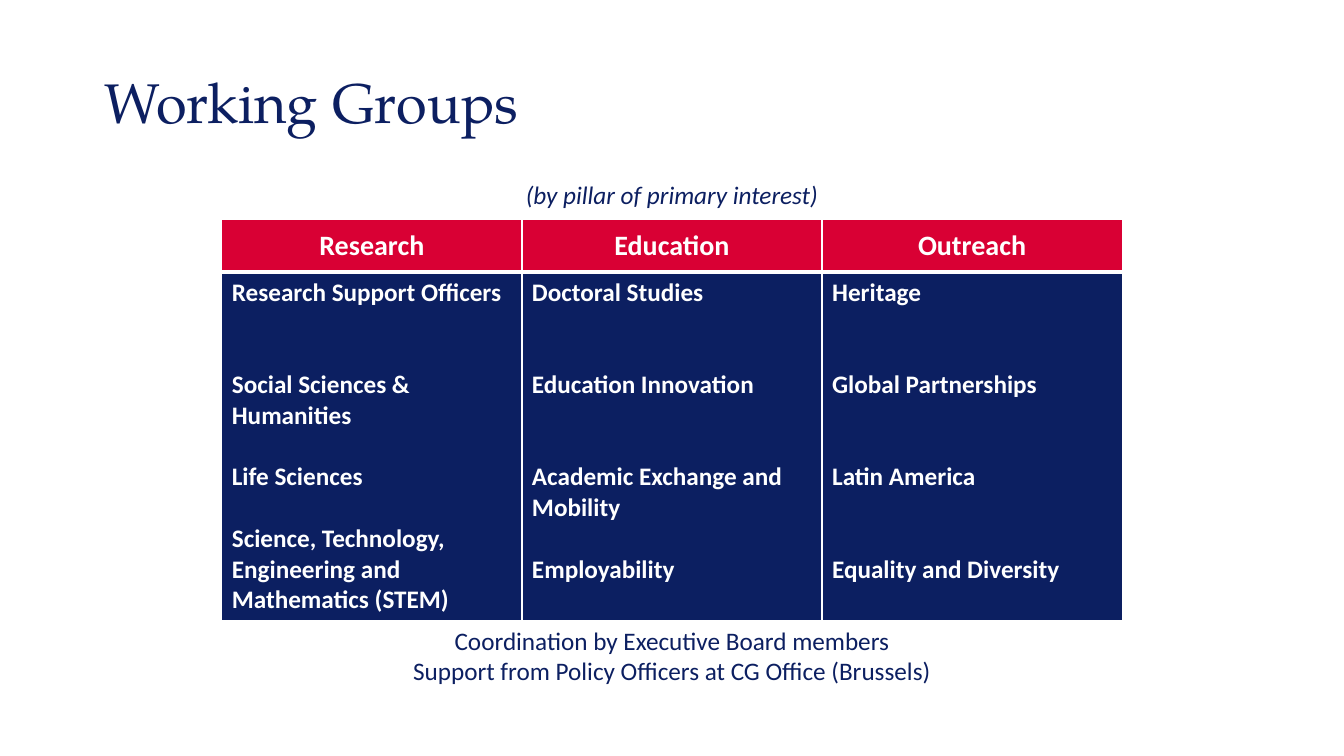
"""Build the Working Groups slide: a title, a three-pillar table and two captions."""
from dataclasses import dataclass

from lxml.etree import SubElement
from pptx import Presentation
from pptx.dml.color import RGBColor
from pptx.enum.text import MSO_ANCHOR as Anchor, PP_ALIGN as Align
from pptx.oxml.ns import qn
from pptx.util import Inches, Pt


@dataclass(frozen=True)
class Theme:
    navy: RGBColor = RGBColor(0x0C, 0x1F, 0x61)
    red: RGBColor = RGBColor(0xD9, 0x00, 0x34)
    white: RGBColor = RGBColor(0xFF, 0xFF, 0xFF)
    title_font: str = "TeX Gyre Pagella"
    text_font: str = "Calibri"
    title_size: int = 40
    header_size: int = 20
    text_size: int = 18
    line_height: int = 22
    thin_border: int = 1
    thick_border: int = 3


THEME = Theme()
SLIDE_WIDTH, SLIDE_HEIGHT = Inches(13.33), Inches(7.5)
HEADER_HEIGHT, BODY_HEIGHT = 0.07, 0.46

PILLARS = {
    "Research": [
        (0, "Research Support Officers"),
        (2, "Social Sciences & Humanities"),
        (1, "Life Sciences"),
        (1, "Science, Technology, Engineering and Mathematics (STEM)"),
    ],
    "Education": [
        (0, "Doctoral Studies"),
        (2, "Education Innovation"),
        (2, "Academic Exchange and Mobility"),
        (1, "Employability"),
    ],
    "Outreach": [
        (0, "Heritage"),
        (2, "Global Partnerships"),
        (2, "Latin America"),
        (2, "Equality and Diversity"),
    ],
}


def centred(width, top, height):
    """Turn shares of the slide into a horizontally centred box."""
    box_width = int(SLIDE_WIDTH * width)
    left = (SLIDE_WIDTH - box_width) // 2
    return left, int(SLIDE_HEIGHT * top), box_width, int(SLIDE_HEIGHT * height)


def style(paragraph, size, color, name=THEME.text_font, bold=False, italic=False):
    font = paragraph.font
    font.name, font.size, font.bold, font.italic = name, Pt(size), bold, italic
    font.color.rgb = color


def write_lines(frame, lines):
    """Write one paragraph for each line and return the paragraphs."""
    frame.text = "\n".join(lines)
    return frame.paragraphs


def add_title(slide, text, box):
    title = slide.shapes.title
    title.left, title.top, title.width, title.height = box
    title.text_frame.vertical_anchor = Anchor.MIDDLE
    paragraph, = write_lines(title.text_frame, [text])
    paragraph.alignment = Align.LEFT
    paragraph.line_spacing = 0.9
    style(paragraph, THEME.title_size, THEME.navy, THEME.title_font)


def add_caption(slide, lines, box, italic=False):
    frame = slide.shapes.add_textbox(*box).text_frame
    frame.word_wrap = True
    for paragraph in write_lines(frame, lines):
        paragraph.alignment = Align.CENTER
        style(paragraph, THEME.text_size, THEME.navy, italic=italic)


def paint_cell(cell, fill, top, bottom):
    """Give a cell white borders and a solid fill."""
    properties = cell._tc.get_or_add_tcPr()
    widths = {"L": THEME.thin_border, "R": THEME.thin_border, "T": top, "B": bottom}
    for side, width in widths.items():
        line = SubElement(properties, qn(f"a:ln{side}"), w=str(Pt(width)))
        SubElement(SubElement(line, qn("a:solidFill")), qn("a:srgbClr"), val=str(THEME.white))
    cell.fill.solid()
    cell.fill.fore_color.rgb = fill


def fill_header(cell, pillar):
    paint_cell(cell, THEME.red, THEME.thin_border, THEME.thick_border)
    cell.vertical_anchor = Anchor.MIDDLE
    paragraph, = write_lines(cell.text_frame, [pillar])
    paragraph.alignment = Align.CENTER
    style(paragraph, THEME.header_size, THEME.white, bold=True)


def fill_groups(cell, groups):
    """List the groups, each preceded by its gap in lines."""
    paint_cell(cell, THEME.navy, THEME.thick_border, THEME.thin_border)
    paragraphs = write_lines(cell.text_frame, [name for _, name in groups])
    for paragraph, (gap, _) in zip(paragraphs, groups):
        if gap:
            paragraph.space_before = Pt(gap * THEME.line_height)
        style(paragraph, THEME.text_size, THEME.white, bold=True)


def add_pillar_table(slide, pillars, box):
    table = slide.shapes.add_table(2, len(pillars), *box).table
    for row, height in zip(table.rows, (HEADER_HEIGHT, BODY_HEIGHT)):
        row.height = int(SLIDE_HEIGHT * height)
    for column, (pillar, groups) in enumerate(pillars.items()):
        fill_header(table.cell(0, column), pillar)
        fill_groups(table.cell(1, column), groups)


def main():
    presentation = Presentation()
    presentation.slide_width, presentation.slide_height = SLIDE_WIDTH, SLIDE_HEIGHT
    slide = presentation.slides.add_slide(presentation.slide_layouts[5])
    add_title(slide, "Working Groups", centred(0.86, 0.05, 0.18))
    table_height = HEADER_HEIGHT + BODY_HEIGHT
    add_pillar_table(slide, PILLARS, centred(0.67, 0.29, table_height))
    coordination = [
        "Coordination by Executive Board members",
        "Support from Policy Officers at CG Office (Brussels)",
    ]
    add_caption(slide, coordination, centred(0.41, 0.82, 0.09))
    add_caption(slide, ["(by pillar of primary interest)"], centred(0.38, 0.23, 0.05), italic=True)
    presentation.save("out.pptx")


if __name__ == "__main__":
    main()
